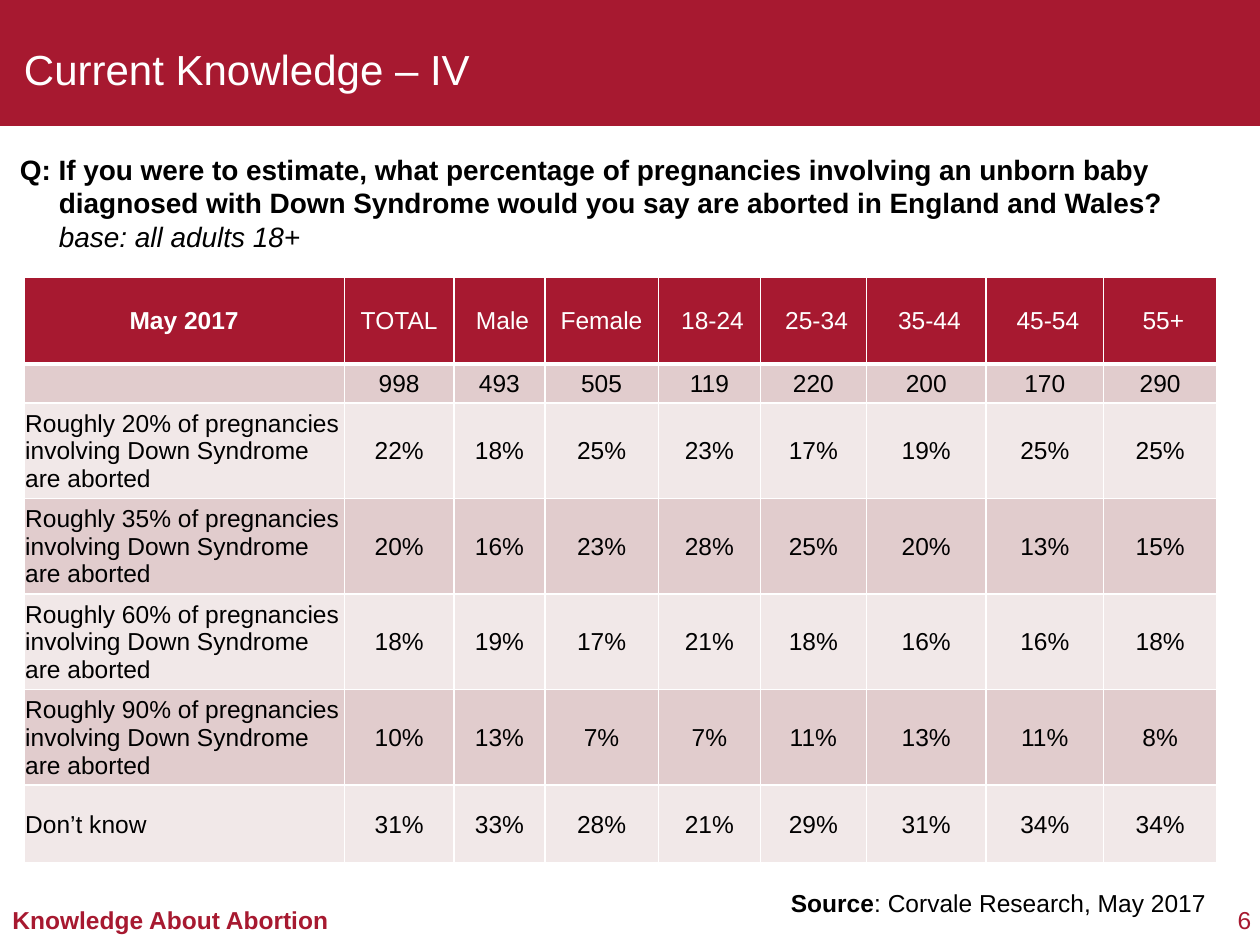
from lxml import etree
from pptx import Presentation
from pptx.dml.color import RGBColor
from pptx.enum.shapes import MSO_SHAPE
from pptx.enum.text import MSO_ANCHOR, PP_ALIGN
from pptx.oxml.ns import qn
from pptx.util import Inches, Pt

RECTANGLE = MSO_SHAPE.RECTANGLE
TOP, MIDDLE = MSO_ANCHOR.TOP, MSO_ANCHOR.MIDDLE
LEFT, CENTER, RIGHT = PP_ALIGN.LEFT, PP_ALIGN.CENTER, PP_ALIGN.RIGHT

COLORS = {
    "crimson": "A71930",
    "rose": "E1CCCD",
    "blush": "F1E8E8",
    "white": "FFFFFF",
    "black": "000000",
}
FONT = "Arial"
GRID_COLUMNS, GRID_ROWS = 100, 75
SLIDE_WIDTH, SLIDE_HEIGHT = Inches(10), Inches(7.5)

BAND_BOX = (0, 0, 100, 10)
TITLE_BOX = (0, 2.6, 77.5, 5.7)
QUESTION_BOX = (0.6, 11.6, 99.4, 9.1)
TABLE_BOX = (1.9, 22, 94.7, 46.5)
SOURCE_BOX = (49.7, 70, 47, 3.4)
FOOTER_BOX = (0, 71.3, 27.2, 3.4)
NUMBER_BOX = (96.9, 71.8, 2.4, 2.3)

COLUMN_WEIGHTS = (2.54, 0.87, 0.72, 0.9, 0.81, 0.84, 0.95, 0.93, 0.9)
ROW_WEIGHTS = (0.69, 0.31, 0.76, 0.76, 0.76, 0.76, 0.62)
SHIFTED_HEADERS = ("Male", "18-24", "25-34", "35-44", "45-54", "55+")
ESTIMATE = "Roughly {}% of pregnancies involving Down Syndrome are aborted"
TABLE_ROWS = (
    ("May 2017", "TOTAL", "Male", "Female", "18-24", "25-34", "35-44", "45-54", "55+"),
    ("", "998", "493", "505", "119", "220", "200", "170", "290"),
    (ESTIMATE.format(20), "22%", "18%", "25%", "23%", "17%", "19%", "25%", "25%"),
    (ESTIMATE.format(35), "20%", "16%", "23%", "28%", "25%", "20%", "13%", "15%"),
    (ESTIMATE.format(60), "18%", "19%", "17%", "21%", "18%", "16%", "16%", "18%"),
    (ESTIMATE.format(90), "10%", "13%", "7%", "7%", "11%", "13%", "11%", "8%"),
    ("Don’t know", "31%", "33%", "28%", "21%", "29%", "31%", "34%", "34%"),
)


def place(box):
    left, top, width, height = box
    column, row = SLIDE_WIDTH / GRID_COLUMNS, SLIDE_HEIGHT / GRID_ROWS
    return int(left * column), int(top * row), int(width * column), int(height * row)


def add_run(paragraph, text, size, color, bold=False, italic=False):
    run = paragraph.add_run()
    run.text = text
    run.font.name = FONT
    run.font.size = Pt(size)
    run.font.bold = bold
    run.font.italic = italic
    run.font.color.rgb = RGBColor.from_string(COLORS[color])


def add_text_frame(slide, box, anchor=TOP, wrap=True):
    frame = slide.shapes.add_textbox(*place(box)).text_frame
    frame.word_wrap = wrap
    frame.vertical_anchor = anchor
    return frame


def add_title(slide, band_box, title_box):
    band = slide.shapes.add_shape(RECTANGLE, *place(band_box))
    band.shadow.inherit = False
    band.fill.solid()
    band.fill.fore_color.rgb = RGBColor.from_string(COLORS["crimson"])
    band.line.fill.background()
    frame = add_text_frame(slide, title_box, MIDDLE)
    frame.margin_left = Inches(0.19)
    add_run(frame.paragraphs[0], "Current Knowledge – IV", 24, "white")


def add_question(slide, box):
    paragraph = add_text_frame(slide, box).paragraphs[0]
    properties = paragraph._p.get_or_add_pPr()
    hanging = Inches(0.31)
    properties.set("marL", str(hanging))
    properties.set("indent", str(-hanging))
    lines = (
        "Q: If you were to estimate, what percentage of pregnancies involving an unborn baby",
        "diagnosed with Down Syndrome would you say are aborted in England and Wales?",
    )
    for line in lines:
        add_run(paragraph, line, 16, "black", bold=True)
        paragraph.add_line_break()
    add_run(paragraph, "base: all adults 18+", 16, "black", italic=True)


def set_borders(cell, bottom_width, top_width):
    properties = cell._tc.get_or_add_tcPr()
    widths = {"a:lnL": 1, "a:lnR": 1, "a:lnT": top_width, "a:lnB": bottom_width}
    for position, (tag, width) in enumerate(widths.items()):
        line = etree.Element(qn(tag), w=str(Pt(width)))
        fill = etree.SubElement(line, qn("a:solidFill"))
        etree.SubElement(fill, qn("a:srgbClr"), val=COLORS["white"])
        properties.insert(position, line)


def fill_cell(cell, text, row, column):
    is_header = row == 0
    fill = "crimson" if is_header else "rose" if row % 2 else "blush"
    cell.fill.solid()
    cell.fill.fore_color.rgb = RGBColor.from_string(COLORS[fill])
    cell.vertical_anchor = MIDDLE
    cell.margin_left = Inches(0.06 if text in SHIFTED_HEADERS else 0.01)
    cell.margin_right = cell.margin_top = Inches(0.01)
    cell.margin_bottom = 0
    set_borders(cell, 3 if is_header else 1, 3 if row == 1 else 1)
    if text:
        paragraph = cell.text_frame.paragraphs[0]
        paragraph.alignment = CENTER if is_header or column else LEFT
        color = "white" if is_header else "black"
        add_run(paragraph, text, 14, color, bold=is_header and column == 0)


def add_results_table(slide, box):
    left, top, width, height = place(box)
    table = slide.shapes.add_table(
        len(ROW_WEIGHTS), len(COLUMN_WEIGHTS), left, top, width, height
    ).table
    for column, weight in zip(table.columns, COLUMN_WEIGHTS):
        column.width = int(width * weight / sum(COLUMN_WEIGHTS))
    for row, weight in zip(table.rows, ROW_WEIGHTS):
        row.height = int(height * weight / sum(ROW_WEIGHTS))
    for row, texts in enumerate(TABLE_ROWS):
        for column, text in enumerate(texts):
            fill_cell(table.cell(row, column), text, row, column)


def add_source(slide, box):
    paragraph = add_text_frame(slide, box).paragraphs[0]
    paragraph.alignment = RIGHT
    add_run(paragraph, "Source", 14, "black", bold=True)
    add_run(paragraph, ": Corvale Research, May 2017", 14, "black")


def add_footer(slide, label_box, number_box):
    label = add_text_frame(slide, label_box, wrap=False).paragraphs[0]
    add_run(label, "Knowledge About Abortion", 14, "crimson", bold=True)
    frame = add_text_frame(slide, number_box, wrap=False)
    frame.margin_left = frame.margin_right = frame.margin_top = frame.margin_bottom = 0
    number = frame.paragraphs[0]
    number.alignment = RIGHT
    add_run(number, "6", 14, "crimson")


def main():
    presentation = Presentation()
    presentation.slide_width, presentation.slide_height = SLIDE_WIDTH, SLIDE_HEIGHT
    slide = presentation.slides.add_slide(presentation.slide_layouts[6])
    add_title(slide, BAND_BOX, TITLE_BOX)
    add_footer(slide, FOOTER_BOX, NUMBER_BOX)
    add_source(slide, SOURCE_BOX)
    add_results_table(slide, TABLE_BOX)
    add_question(slide, QUESTION_BOX)
    presentation.save("out.pptx")


if __name__ == "__main__":
    main()
